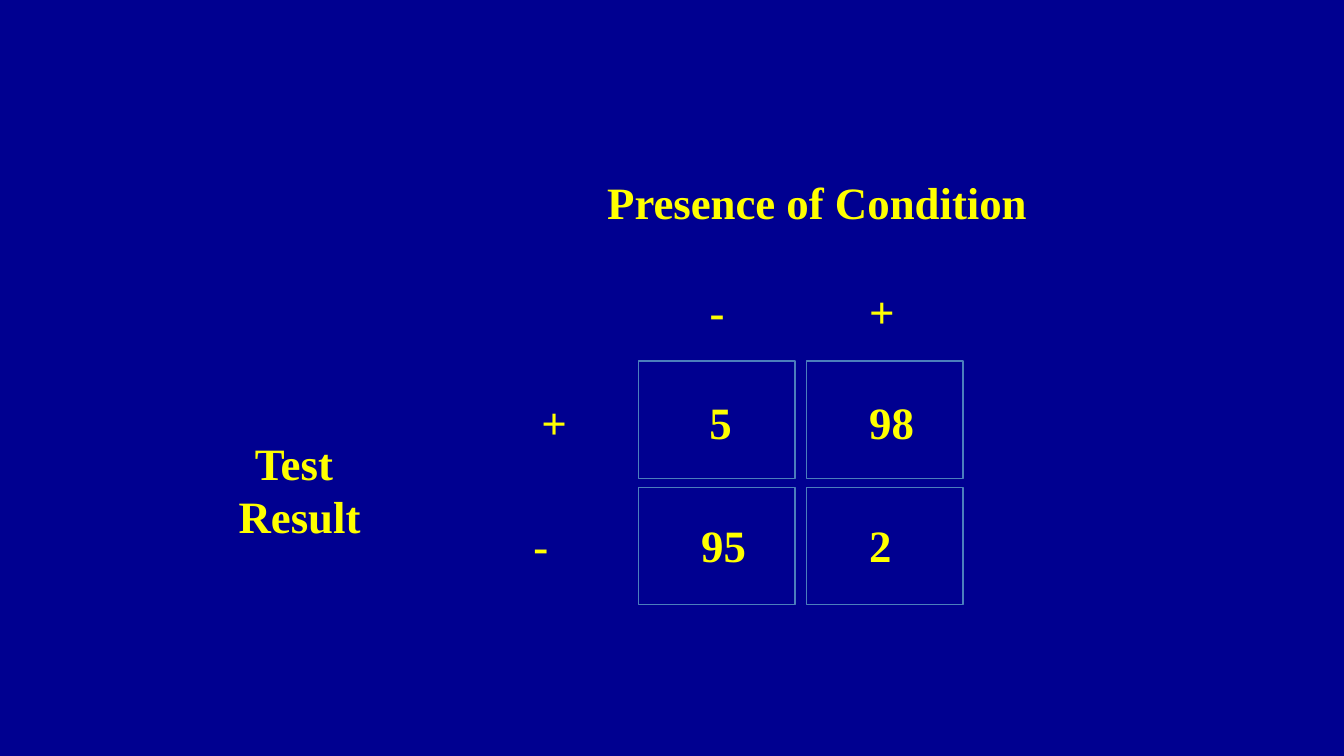
"""Build a two-by-two slide of test result against presence of condition."""
from pptx import Presentation
from pptx.dml.color import RGBColor
from pptx.enum import shapes, text
from pptx.util import Pt

COLORS = {"background": "000090", "text": "FFFF00", "outline": "4B7EBC"}
FONT = "Times New Roman"
ROW_TOPS = {"heading": 148.3, "positive": 208, "negative": 273.6}
WIDTHS = {"+": 28.8, "-": 22.3, "5": 26.6, "2": 26.6, "95": 38.9, "98": 38.9}


def color(name):
    return RGBColor.from_string(COLORS[name])


def add_text(s, content, left, top, width, height=36, size=24, align=text.PP_ALIGN.LEFT):
    tb = s.shapes.add_textbox(Pt(left), Pt(top), Pt(width), Pt(height))
    tf = tb.text_frame
    tf.word_wrap = False
    tf.auto_size = text.MSO_AUTO_SIZE.SHAPE_TO_FIT_TEXT
    for i, line in enumerate(content.split("\n")):
        p = tf.paragraphs[0] if i == 0 else tf.add_paragraph()
        p.alignment = align
        r = p.add_run()
        r.text = line
        r.font.name = FONT
        r.font.size = Pt(size)
        r.font.bold = True
        r.font.color.rgb = color("text")


def add_cell(s, left, top, width=84, height=63):
    sp = s.shapes.add_shape(
        shapes.MSO_SHAPE.RECTANGLE, Pt(left), Pt(top), Pt(width), Pt(height)
    )
    sp.shadow.inherit = False
    sp.fill.background()
    sp.line.color.rgb = color("outline")
    sp.line.width = Pt(0.75)


def main():
    prs = Presentation()
    prs.slide_width, prs.slide_height = Pt(720), Pt(405)
    s = prs.slides.add_slide(prs.slide_layouts[6])
    s.background.fill.solid()
    s.background.fill.fore_color.rgb = color("background")

    entries = [
        ("+", 283, "positive"), ("-", 278.6, "negative"),
        ("-", 373, "heading"), ("5", 373, "positive"), ("95", 368.6, "negative"),
        ("+", 458.6, "heading"), ("98", 458.6, "positive"), ("2", 458.6, "negative"),
    ]
    for label, left, row in entries:
        add_text(s, label, left, ROW_TOPS[row], WIDTHS[label])
    add_text(s, "Presence of Condition", 318.2, 90, 242)
    add_text(s, "Test \nResult", 120.2, 229.7, 80.6, 65.5, align=text.PP_ALIGN.CENTER)

    for row in range(2):
        for column in range(2):
            add_cell(s, 342 + 90 * column, 193.5 + 67.5 * row)
    prs.save("out.pptx")


if __name__ == "__main__":
    main()
